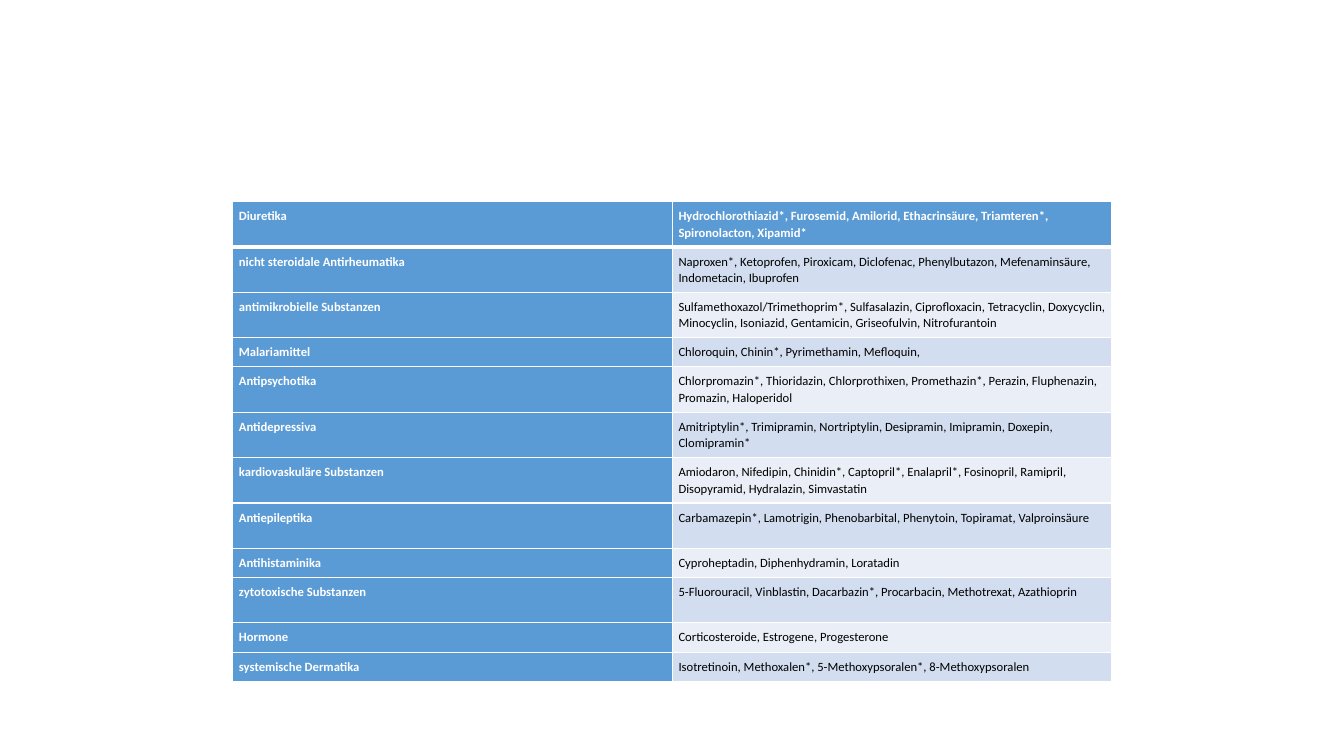
import pptx
import pptx.dml.color
import pptx.oxml
import pptx.oxml.ns
import pptx.util

EMU_PER_PX = 9144
WHITE, BLACK, BLUE = "FFFFFF", "000000", "5B9BD5"
BANDS = ("EAEFF7", "D2DEEF")
TALL_ROW, SHORT_ROW = 45, 29

DRUG_GROUPS = [
    ("Diuretika", TALL_ROW,
     "Hydrochlorothiazid*, Furosemid, Amilorid, Ethacrinsäure, Triamteren*, Spironolacton, Xipamid*"),
    ("nicht steroidale Antirheumatika", TALL_ROW,
     "Naproxen*, Ketoprofen, Piroxicam, Diclofenac, Phenylbutazon, Mefenaminsäure, Indometacin, Ibuprofen"),
    ("antimikrobielle Substanzen", TALL_ROW,
     "Sulfamethoxazol/Trimethoprim*, Sulfasalazin, Ciprofloxacin, Tetracyclin, Doxycyclin, "
     "Minocyclin, Isoniazid, Gentamicin, Griseofulvin, Nitrofurantoin"),
    ("Malariamittel", SHORT_ROW, "Chloroquin, Chinin*, Pyrimethamin, Mefloquin,"),
    ("Antipsychotika", TALL_ROW,
     "Chlorpromazin*, Thioridazin, Chlorprothixen, Promethazin*, Perazin, Fluphenazin, Promazin, Haloperidol"),
    ("Antidepressiva", TALL_ROW,
     "Amitriptylin*, Trimipramin, Nortriptylin, Desipramin, Imipramin, Doxepin, Clomipramin*"),
    ("kardiovaskuläre Substanzen", TALL_ROW,
     "Amiodaron, Nifedipin, Chinidin*, Captopril*, Enalapril*, Fosinopril, Ramipril, "
     "Disopyramid, Hydralazin, Simvastatin"),
    ("Antiepileptika", TALL_ROW,
     "Carbamazepin*, Lamotrigin, Phenobarbital, Phenytoin, Topiramat, Valproinsäure"),
    ("Antihistaminika", SHORT_ROW, "Cyproheptadin, Diphenhydramin, Loratadin"),
    ("zytotoxische Substanzen", TALL_ROW,
     "5-Fluorouracil, Vinblastin, Dacarbazin*, Procarbacin, Methotrexat, Azathioprin"),
    ("Hormone", SHORT_ROW, "Corticosteroide, Estrogene, Progesterone"),
    ("systemische Dermatika", SHORT_ROW,
     "Isotretinoin, Methoxalen*, 5-Methoxypsoralen*, 8-Methoxypsoralen"),
]


def px(length):
    """Turn whole px into EMU."""
    return pptx.util.Emu(length * EMU_PER_PX)


def color(value):
    """Turn a hex string into a colour."""
    return pptx.dml.color.RGBColor.from_string(value)


class SlideBuilder:
    """Hold the style and the current slide."""

    font_name = "Calibri"
    font_size = 9
    line_spacing = 1.07
    inset = 6

    def __init__(self, slide):
        """Remember the slide to build on."""
        self.slide = slide

    def border(self, cell, side, points):
        """Draw one white cell border."""
        line = pptx.oxml.parse_xml(
            f'<a:ln{side} {pptx.oxml.ns.nsdecls("a")} w="{pptx.util.Pt(points)}">'
            f'<a:solidFill><a:srgbClr val="{WHITE}"/></a:solidFill></a:ln{side}>'
        )
        cell._tc.get_or_add_tcPr().append(line)

    def cell(self, cell, text, fill, text_color, bold, top, bottom):
        """Fill and format one table cell."""
        cell.margin_left = cell.margin_right = px(self.inset)
        cell.margin_top = cell.margin_bottom = px(self.inset)
        for side, points in (("L", 1), ("R", 1), ("T", top), ("B", bottom)):
            self.border(cell, side, points)
        cell.fill.solid()
        cell.fill.fore_color.rgb = color(fill)
        cell.text = text
        paragraph = cell.text_frame.paragraphs[0]
        paragraph.line_spacing = self.line_spacing
        paragraph.font.name = self.font_name
        paragraph.font.size = pptx.util.Pt(self.font_size)
        paragraph.font.bold = bold
        paragraph.font.color.rgb = color(text_color)

    def drug_table(self, left, top, column_width, groups):
        """Add the table of drug groups and their substances."""
        height = sum(row_height for _, row_height, _ in groups)
        table = self.slide.shapes.add_table(
            len(groups), 2, px(left), px(top), px(2 * column_width), px(height)
        ).table
        table.first_col = True
        for column in table.columns:
            column.width = px(column_width)
        for index, (group, row_height, substances) in enumerate(groups):
            table.rows[index].height = px(row_height)
            for column_index, text in enumerate((group, substances)):
                strong = index == 0 or column_index == 0
                self.cell(
                    table.cell(index, column_index),
                    text,
                    fill=BLUE if strong else BANDS[index % 2],
                    text_color=WHITE if strong else BLACK,
                    bold=strong,
                    top=3 if index == 1 else 1,
                    bottom=3 if index == 0 else 1,
                )


def main():
    """Build and save the presentation."""
    presentation = pptx.Presentation()
    presentation.slide_width = px(1333)
    presentation.slide_height = px(750)
    slide = presentation.slides.add_slide(presentation.slide_layouts[6])
    SlideBuilder(slide).drug_table(231, 200, 436, DRUG_GROUPS)
    presentation.save("out.pptx")


if __name__ == "__main__":
    main()
